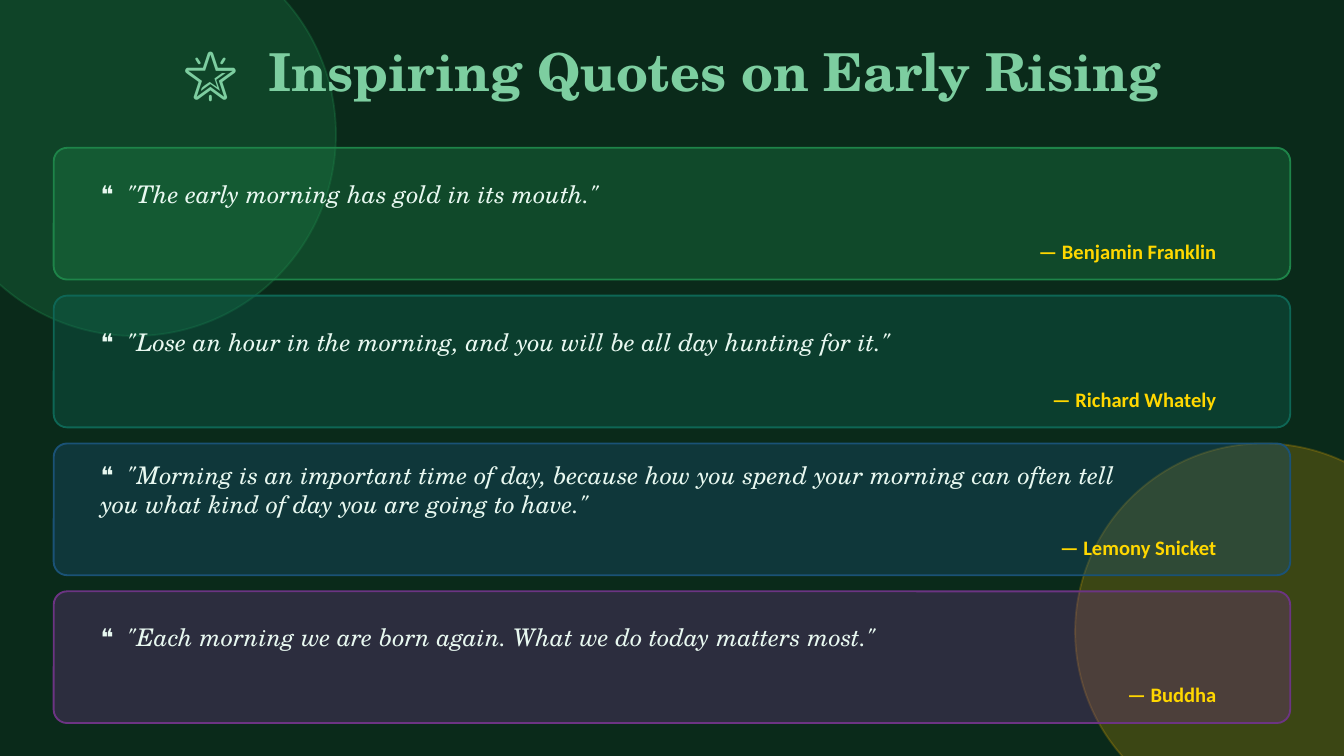
from lxml import etree
from pptx import Presentation
from pptx.dml.color import RGBColor
from pptx.enum.shapes import MSO_SHAPE
from pptx.enum.text import MSO_ANCHOR, PP_ALIGN
from pptx.oxml.ns import qn
from pptx.util import Emu, Pt

OVAL = MSO_SHAPE.OVAL
ROUNDED = MSO_SHAPE.ROUNDED_RECTANGLE
MIDDLE = MSO_ANCHOR.MIDDLE
LEFT, CENTER, RIGHT = PP_ALIGN.LEFT, PP_ALIGN.CENTER, PP_ALIGN.RIGHT

EMU_PER_PX = 4572  # 200 px to the inch
COLORS = {
    "night": "0A2A1A",
    "leaf": "27AE60",
    "sun": "FFB800",
    "title": "7DCEA0",
    "quote": "E8F8F0",
    "author": "FFD700",
    "green": "1E8449",
    "teal": "0E6655",
    "blue": "1A5276",
    "purple": "6C3483",
}
SERIF, SANS = "TeX Gyre Schola", "Calibri"

QUOTES = [
    ("The early morning has gold in its mouth.", "Benjamin Franklin", "green"),
    ("Lose an hour in the morning, and you will be all day hunting for it.",
     "Richard Whately", "teal"),
    ("Morning is an important time of day, because how you spend your morning "
     "can often tell you what kind of day you are going to have.",
     "Lemony Snicket", "blue"),
    ("Each morning we are born again. What we do today matters most.",
     "Buddha", "purple"),
]
CARD_LEFT, CARD_TOP, CARD_WIDTH, CARD_HEIGHT = 80, 220, 1840, 196
CARD_STEP = 220
CARD_RADIUS = 20
TEXT_LEFT = CARD_LEFT + 50


def px(value):
    return Emu(value * EMU_PER_PX)


def rgb(name):
    return RGBColor.from_string(COLORS[name])


def set_opacity(properties, percent):
    """Add an alpha value to the solid colour of a fill or line element."""
    color = properties.find(qn("a:solidFill"))[0]
    etree.SubElement(color, qn("a:alpha"), val=str(percent * 1000))


class QuoteSlide:
    def __init__(self, slide):
        self.slide = slide
        background = slide.background.fill
        background.solid()
        background.fore_color.rgb = rgb("night")

    def shape(self, kind, box, color, opacity):
        shape = self.slide.shapes.add_shape(kind, *map(px, box))
        shape.shadow.inherit = False
        shape.fill.solid()
        shape.fill.fore_color.rgb = rgb(color)
        shape.line.color.rgb = rgb(color)
        shape.line.width = Pt(1)
        set_opacity(shape._element.spPr, opacity)
        return shape

    def glow(self, left, top, size, color):
        circle = self.shape(OVAL, (left, top, size, size), color, 20)
        set_opacity(circle._element.spPr.find(qn("a:ln")), 20)

    def card(self, box, color):
        card = self.shape(ROUNDED, box, color, 35)
        card.adjustments[0] = CARD_RADIUS / CARD_HEIGHT

    def text(self, box, words, size, font, color, align=LEFT, bold=False, italic=False):
        frame = self.slide.shapes.add_textbox(*map(px, box)).text_frame
        frame.word_wrap = True
        frame.vertical_anchor = MIDDLE
        paragraph = frame.paragraphs[0]
        paragraph.text = words
        paragraph.alignment = align
        style = paragraph.font
        style.name, style.size = font, Pt(size)
        style.bold, style.italic = bold, italic
        style.color.rgb = rgb(color)


def main():
    deck = Presentation()
    deck.slide_width, deck.slide_height = px(2000), px(1125)
    page = QuoteSlide(deck.slides.add_slide(deck.slide_layouts[6]))

    # Background glows
    page.glow(-100, -100, 600, "leaf")
    page.glow(1600, 660, 560, "sun")

    # Title
    page.text((60, 20, 1880, 170), "🌟  Inspiring Quotes on Early Rising",
              28, SERIF, "title", CENTER, bold=True)

    # Quote cards
    for index, (quote, author, color) in enumerate(QUOTES):
        top = CARD_TOP + index * CARD_STEP
        page.card((CARD_LEFT, top, CARD_WIDTH, CARD_HEIGHT), color)
        page.text((TEXT_LEFT, top + 10, 1560, 116), f'❝  "{quote}"',
                  13, SERIF, "quote", italic=True)
        page.text((TEXT_LEFT, top + 124, 1700, 60), f"— {author}",
                  11, SANS, "author", RIGHT, bold=True)

    deck.save("out.pptx")


if __name__ == "__main__":
    main()
